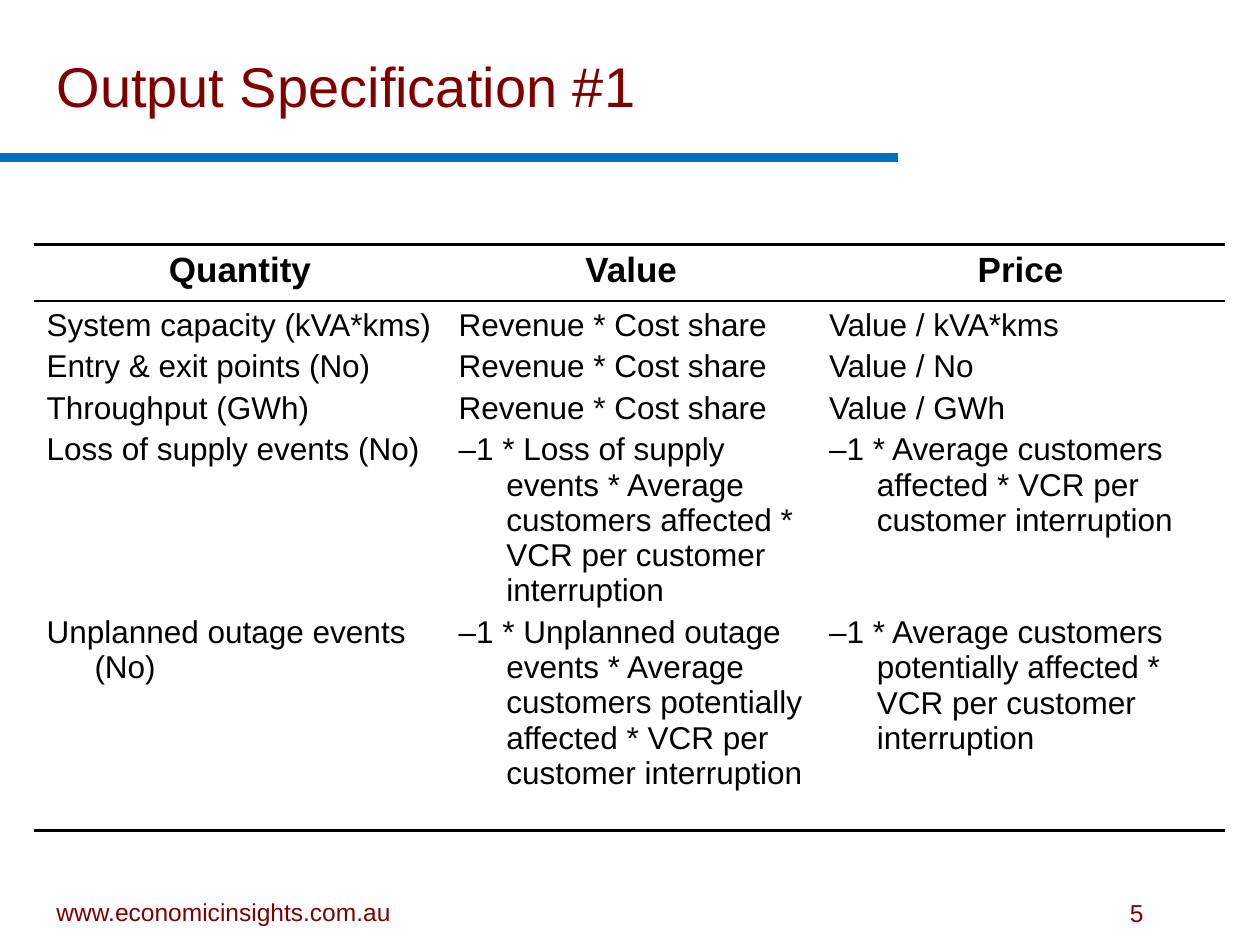
import dataclasses

import lxml.etree
import pptx
import pptx.dml.color
import pptx.enum.shapes
import pptx.enum.text
import pptx.oxml.ns
import pptx.util

Inches = pptx.util.Inches
Pt = pptx.util.Pt
Align = pptx.enum.text.PP_ALIGN
Anchor = pptx.enum.text.MSO_ANCHOR
qn = pptx.oxml.ns.qn


@dataclasses.dataclass(frozen=True)
class Theme:
    font: str = "Arial"
    accent: str = "800000"
    ink: str = "000000"
    rule: str = "0070C0"
    title_size: float = 32
    header_size: float = 20
    body_size: float = 18
    footer_size: float = 14
    line_height: float = 20.2
    paragraph_gap: float = 3.6
    border_width: float = 1.5
    hanging: float = 0.38


def write_text(paragraph, text, *, font, size, color, bold=False,
               align=Align.LEFT, hanging=0, before=0, after=0):
    if hanging:
        properties = paragraph._p.get_or_add_pPr()
        properties.set("marL", str(Inches(hanging)))
        properties.set("indent", str(-Inches(hanging)))
    paragraph.alignment = align
    paragraph.space_before = Pt(before)
    paragraph.space_after = Pt(after)
    run = paragraph.add_run()
    run.text = text
    run.font.name = font
    run.font.size = Pt(size)
    run.font.bold = bold
    run.font.color.rgb = pptx.dml.color.RGBColor.from_string(color)


class SlideBuilder:
    def __init__(self, slide, theme):
        self.slide = slide
        self.theme = theme

    def rule(self, start_x, end_x, y, width):
        connector = self.slide.shapes.add_connector(
            pptx.enum.shapes.MSO_CONNECTOR.STRAIGHT,
            Inches(start_x), Inches(y), Inches(end_x), Inches(y))
        connector.line.color.rgb = pptx.dml.color.RGBColor.from_string(self.theme.rule)
        connector.line.width = Pt(width)
        lxml.etree.SubElement(connector._element.spPr, qn("a:effectLst"))

    def label(self, text, left, top, width, height, size,
              align=Align.LEFT, anchor=Anchor.BOTTOM, wrap=True):
        shape = self.slide.shapes.add_textbox(
            Inches(left), Inches(top), Inches(width), Inches(height))
        frame = shape.text_frame
        frame.word_wrap = wrap
        frame.vertical_anchor = anchor
        write_text(frame.paragraphs[0], text, font=self.theme.font, size=size,
                   color=self.theme.accent, align=align)

    def borders(self, cell, sides):
        properties = cell._tc.get_or_add_tcPr()
        for side in "LRTB":
            line = lxml.etree.SubElement(properties, qn(f"a:ln{side}"))
            if side in sides:
                line.set("w", str(Pt(self.theme.border_width)))
                fill = lxml.etree.SubElement(line, qn("a:solidFill"))
                lxml.etree.SubElement(fill, qn("a:srgbClr")).set("val", self.theme.ink)
            else:
                lxml.etree.SubElement(line, qn("a:noFill"))

    def cell(self, cell, entries, **text_format):
        self.borders(cell, "TB")
        cell.fill.background()
        frame = cell.text_frame
        for index, (text, blank_lines) in enumerate(entries):
            paragraph = frame.add_paragraph() if index else frame.paragraphs[0]
            write_text(paragraph, text, font=self.theme.font, color=self.theme.ink,
                       hanging=self.theme.hanging,
                       before=self.theme.paragraph_gap if index else 0,
                       after=blank_lines * self.theme.line_height, **text_format)

    def table(self, columns, left, top, widths, heights):
        table = self.slide.shapes.add_table(
            len(heights), len(widths), Inches(left), Inches(top),
            Inches(sum(widths)), Inches(sum(heights))).table
        table.first_row = False
        table.horz_banding = False
        for row, height in zip(table.rows, heights):
            row.height = Inches(height)
        for index, (width, (heading, entries)) in enumerate(zip(widths, columns)):
            table.columns[index].width = Inches(width)
            self.cell(table.cell(0, index), [(heading, 0)],
                      size=self.theme.header_size, bold=True, align=Align.CENTER)
            self.cell(table.cell(1, index), entries, size=self.theme.body_size)


REVENUE_SHARE = ("Revenue * Cost share", 0)
COLUMNS = [
    ("Quantity", [
        ("System capacity (kVA*kms)", 0),
        ("Entry & exit points (No)", 0),
        ("Throughput (GWh)", 0),
        ("Loss of supply events (No)", 4),
        ("Unplanned outage events (No)", 0),
    ]),
    ("Value", [REVENUE_SHARE] * 3 + [
        ("–1 * Loss of supply events * Average customers affected * "
         "VCR per customer interruption", 0),
        ("–1 * Unplanned outage events * Average customers potentially affected * "
         "VCR per customer interruption", 0),
    ]),
    ("Price", [
        ("Value / kVA*kms", 0),
        ("Value / No", 0),
        ("Value / GWh", 0),
        ("–1 * Average customers affected * VCR per customer interruption", 2),
        ("–1 * Average customers potentially affected * "
         "VCR per customer interruption", 0),
    ]),
]


def main():
    presentation = pptx.Presentation()
    presentation.slide_width = Inches(10)
    presentation.slide_height = Inches(7.5)
    theme = Theme()
    builder = SlideBuilder(
        presentation.slides.add_slide(presentation.slide_layouts[6]), theme)
    builder.rule(0, 7.13, 1.25, 5)
    builder.label("www.economicinsights.com.au", 0.2, 7.06, 3.15, 0.34,
                  theme.footer_size, align=Align.CENTER)
    builder.label("5", 8.87, 7.08, 0.44, 0.33, theme.footer_size,
                  anchor=Anchor.TOP, wrap=False)
    builder.label("Output Specification #1", 0.35, 0.36, 6.77, 0.63, theme.title_size)
    builder.table(COLUMNS, 0.27, 1.94, [3.27, 2.94, 3.24], [0.45, 3.94])
    presentation.save("out.pptx")


if __name__ == "__main__":
    main()
